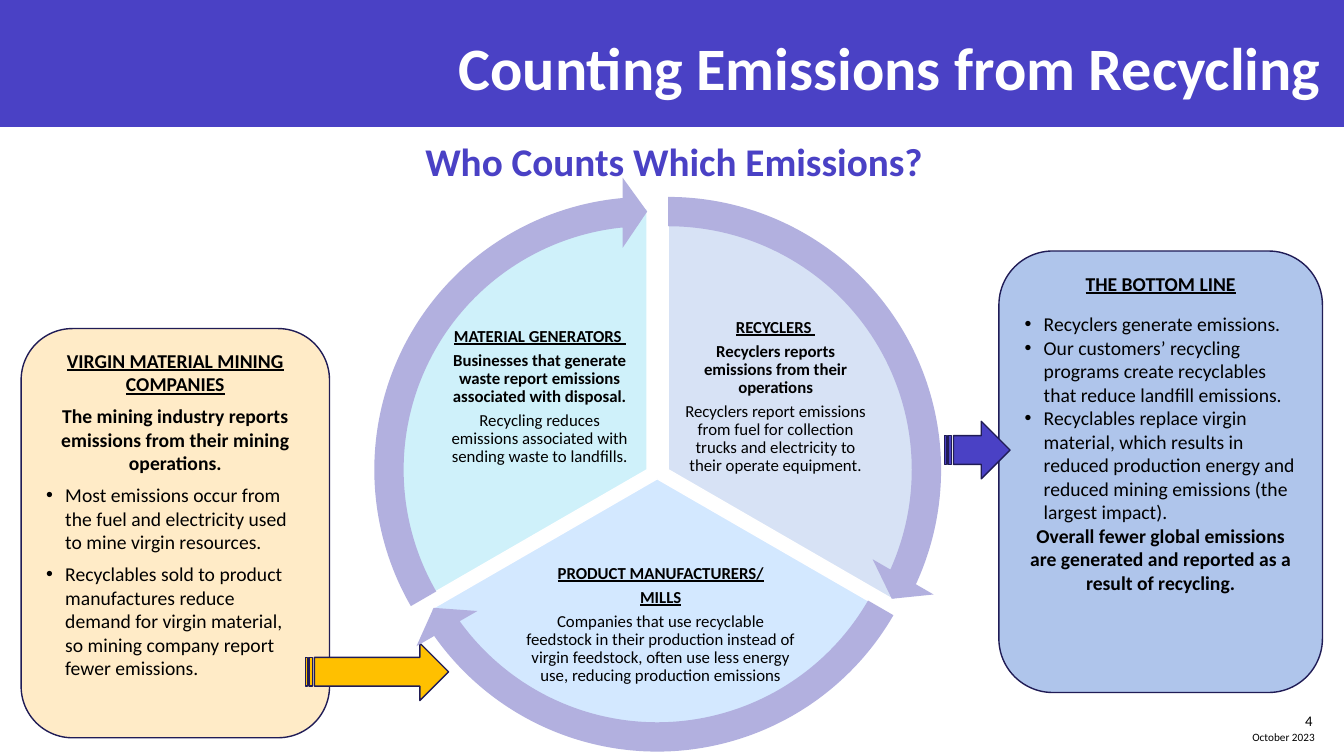
from lxml import etree
from pptx import Presentation
from pptx import util as u
from pptx.dml.color import RGBColor
from pptx.enum import shapes, text
from pptx.oxml.ns import qn

KIND = shapes.MSO_SHAPE
CENTER, RIGHT = text.PP_ALIGN.CENTER, text.PP_ALIGN.RIGHT
MIDDLE, TOP = text.MSO_ANCHOR.MIDDLE, text.MSO_ANCHOR.TOP
INDIGO, NAVY, WHITE, BLACK = "4A41C5", "201C56", "FFFFFF", "000000"
LILAC, GOLD = "B2B0DF", "FFC000"

BOLD = {"bold": True}
HEADING = {"bold": True, "underline": True}
PLAIN = {}


def color(value):
    return RGBColor.from_string(value)


def assign(target, values):
    for name, value in values.items():
        setattr(target, name, value)


class SlideBuilder:
    """Draws styled elements on one slide using a grid of 160 columns by 90 rows."""

    font_name = "Calibri"
    bullet_indent = u.Inches(0.19)

    def __init__(self, presentation):
        self.slide = presentation.slides.add_slide(presentation.slide_layouts[6])
        self.cell = presentation.slide_width / 160

    def place(self, box):
        return [round(value * self.cell) for value in box]

    def shape(self, kind, box, fill, line=None, adjustments=()):
        shape = self.slide.shapes.add_shape(kind, *self.place(box))
        shape.shadow.inherit = False
        shape.fill.solid()
        shape.fill.fore_color.rgb = color(fill)
        if line:
            shape.line.color.rgb = color(line)
            shape.line.width = u.Pt(1)
        else:
            shape.line.fill.background()
        for index, value in enumerate(adjustments):
            shape.adjustments[index] = value
        return shape

    def textbox(self, box, paragraphs, size, anchor=TOP, inset=None, **style):
        shape = self.slide.shapes.add_textbox(*self.place(box))
        if inset is not None:
            sides = ("left", "top", "right", "bottom")
            assign(shape.text_frame, {f"margin_{side}": inset for side in sides})
        self.fill_text(shape, paragraphs, size, anchor, **style)

    def card(self, box, fill, paragraphs):
        shape = self.shape(KIND.ROUNDED_RECTANGLE, box, fill, NAVY)
        self.fill_text(shape, paragraphs, 14)

    def fill_text(self, shape, paragraphs, size, anchor=TOP, ink=BLACK, align=CENTER, layout=PLAIN):
        frame = shape.text_frame
        assign(frame, {"word_wrap": True, "vertical_anchor": anchor})
        for index, (words, look, before, bulleted) in enumerate(paragraphs):
            paragraph = frame.add_paragraph() if index else frame.paragraphs[0]
            assign(paragraph, {"alignment": text.PP_ALIGN.LEFT if bulleted else align,
                               "space_before": u.Pt(before), **layout})
            if bulleted:
                self.add_bullet(paragraph)
            run = paragraph.add_run()
            run.text = words
            assign(run.font, {"name": self.font_name, "size": u.Pt(size), **look})
            run.font.color.rgb = color(ink)

    def add_bullet(self, paragraph):
        properties = paragraph._p.get_or_add_pPr()
        properties.set("marL", str(self.bullet_indent))
        properties.set("indent", str(-self.bullet_indent))
        etree.SubElement(properties, qn("a:buFont")).set("typeface", "Arial")
        etree.SubElement(properties, qn("a:buChar")).set("char", "•")


def line(words, look=PLAIN, before=0):
    return words, look, before, False


def bullet(words, before=0):
    return words, PLAIN, before, True


BOTTOM_LINE = [
    line("THE BOTTOM LINE", HEADING),
    bullet("Recyclers generate emissions.", 12),
    bullet("Our customers’ recycling programs create recyclables that reduce landfill emissions."),
    bullet("Recyclables replace virgin material, which results in reduced production energy "
           "and reduced mining emissions (the largest impact)."),
    line("Overall fewer global emissions are generated and reported as a result of recycling.", BOLD),
]
MINING = [
    line("VIRGIN MATERIAL MINING COMPANIES", HEADING, 6),
    line("The mining industry reports emissions from their mining operations.", BOLD, 6),
    bullet("Most emissions occur from the fuel and electricity used to mine virgin resources.", 6),
    bullet("Recyclables sold to product manufactures reduce demand for virgin material, "
           "so mining company report fewer emissions.", 6),
]
RECYCLERS = [
    line("RECYCLERS ", HEADING),
    line("Recyclers reports emissions from their operations", BOLD),
    line("Recyclers report emissions from fuel for collection trucks and electricity "
         "to their operate equipment."),
]
MANUFACTURERS = [
    line("PRODUCT MANUFACTURERS/", HEADING),
    line("MILLS", HEADING),
    line("Companies that use recyclable feedstock in their production instead of virgin "
         "feedstock, often use less energy use, reducing production emissions"),
]
GENERATORS = [
    line("MATERIAL GENERATORS ", HEADING),
    line("Businesses that generate waste report emissions associated with disposal.", BOLD),
    line("Recycling reduces emissions associated with sending waste to landfills."),
]

PIE_SIZE, RING_MARGIN = 62.16, 3.84
RING_SIZE = PIE_SIZE + 2 * RING_MARGIN
SECTORS = [
    ((48.48, 24.84), (162, 18), "D7E2F5", (14.72, 161.99), (81.24, 38.04, 22.2, 18.48), RECYCLERS),
    ((47.16, 25.92), (18, 90), "D3E8FF", (86.72, 18), (62.04, 66.24, 33.24, 16.32), MANUFACTURERS),
    ((45.96, 24.84), (90, 162), "CFF1FA", (158.73, 90), (53.16, 38.04, 22.2, 18.48), GENERATORS),
]


def draw_wheel(builder):
    layout = {"line_spacing": 0.9, "space_after": u.Pt(4.2)}
    for corner, angles, fill, _, label, words in SECTORS:
        builder.shape(KIND.PIE, (*corner, PIE_SIZE, PIE_SIZE), fill, WHITE, angles)
        builder.textbox(label, words, 12, MIDDLE, u.Inches(0.02), layout=layout)
    for (left, top), _, _, sweep, _, _ in SECTORS:
        box = (left - RING_MARGIN, top - RING_MARGIN, RING_SIZE, RING_SIZE)
        builder.shape(KIND.CIRCULAR_ARROW, box, LILAC, None, (0.05, 3.28, *sweep, 0.06))


def main():
    presentation = Presentation()
    assign(presentation, {"slide_width": u.Inches(40 / 3), "slide_height": u.Inches(7.5)})
    builder = SlideBuilder(presentation)

    builder.shape(KIND.RECTANGLE, (0, 0, 160, 15.1), INDIGO)
    builder.textbox((0, 2.88, 158.4, 10.08), [line("Counting Emissions from Recycling", BOLD)],
                    43, MIDDLE, ink=WHITE, align=RIGHT)
    builder.textbox((149.16, 83.4, 8.28, 4.8), [line("4")], 10.5, MIDDLE, align=RIGHT)
    builder.textbox((11.6, 15.72, 137.28, 6.84), [line("Who Counts Which Emissions?", BOLD)],
                    28, ink=INDIGO)
    builder.card((118.92, 29.88, 38.52, 52.56), "AFC5EB", BOTTOM_LINE)
    builder.card((2.52, 39.12, 36.72, 48.72), "FFEBC7", MINING)
    builder.textbox((147.24, 86.4, 11.16, 2.88), [line("October 2023")], 8)
    builder.shape(KIND.STRIPED_RIGHT_ARROW, (36.36, 76.56, 17.04, 6.84), GOLD, NAVY)
    draw_wheel(builder)
    builder.shape(KIND.STRIPED_RIGHT_ARROW, (112.44, 50.16, 7.8, 6.84), INDIGO, NAVY)

    presentation.save("out.pptx")


if __name__ == "__main__":
    main()
